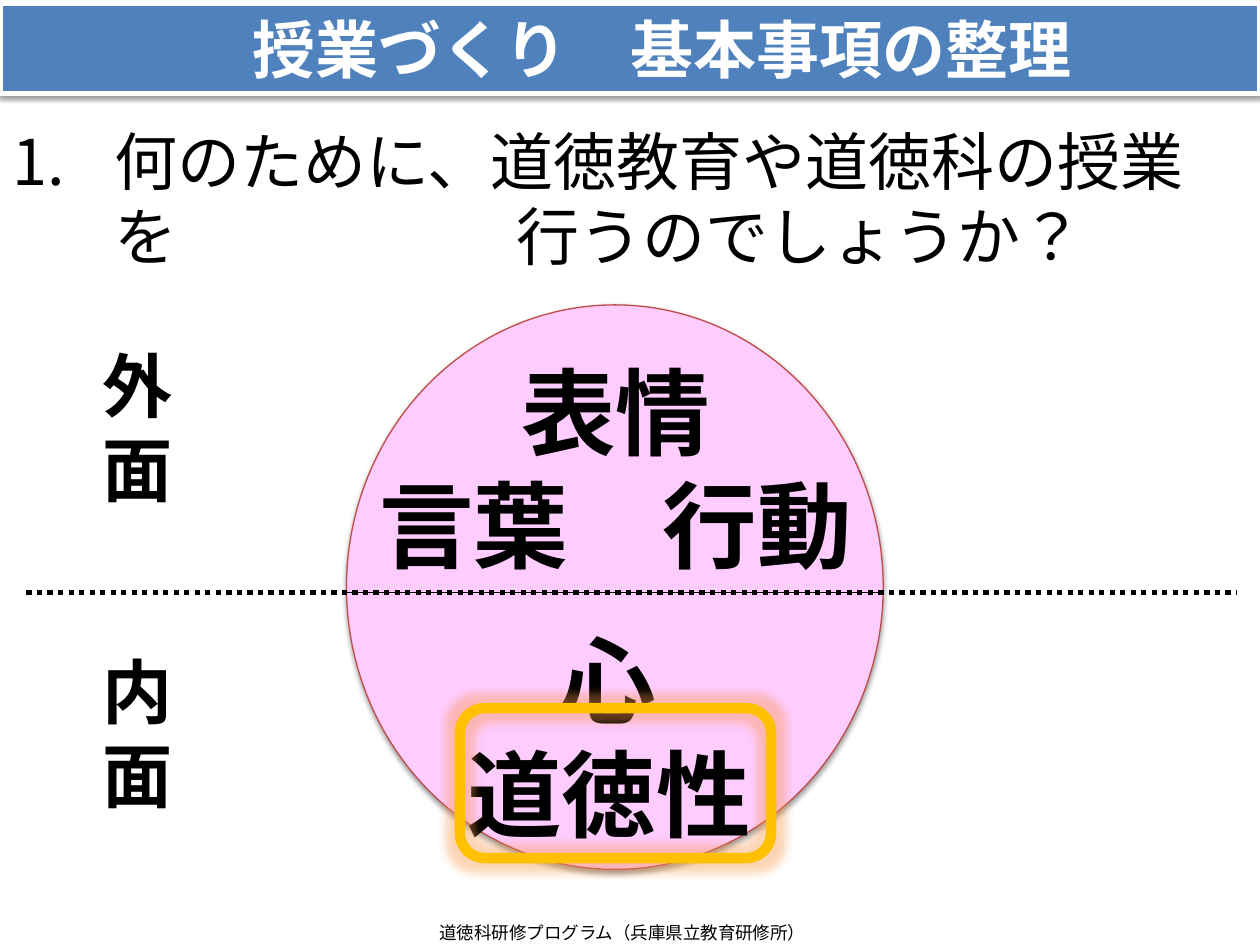
from lxml import etree
from pptx import Presentation
from pptx.dml.color import RGBColor
from pptx.enum.dml import MSO_LINE as Dash
from pptx.enum.lang import MSO_LANGUAGE_ID as Lang
from pptx.enum.shapes import MSO_CONNECTOR as Conn, MSO_SHAPE as Kind
from pptx.enum.text import MSO_ANCHOR as Anchor, PP_ALIGN as Align
from pptx.oxml.ns import qn
from pptx.util import Inches, Pt

FONT = "Noto Sans CJK JP"
BLACK, WHITE = "000000", "FFFFFF"
MID = 4.7  # height of the line between outside and inside
LEFT, RIGHT = 2.75, 7.01  # edges of the circle

TITLE = "　授業づくり　基本事項の整理"
ASK = "何のために、道徳教育や道徳科の授業\vを\t行うのでしょうか？"
FOOT = "道徳科研修プログラム（兵庫県立教育研修所）"
SIDES = [("外面", 2.67), ("内面", 5.1)]
WORDS = [
    (["心", "道徳性"], (3.6, 4.89, 2.47, 1.92)),
    (["表情", "言葉　行動"], (2.89, 2.76, 3.99, 1.92)),
]
RULES = [(LEFT, RIGHT, 0.75, None), (0.21, 9.82, 3, Dash.ROUND_DOT)]


def rgb(code):
    return RGBColor.from_string(code)


def node(parent, tag, **attrs):
    item = etree.SubElement(parent, qn(tag))
    for key, val in attrs.items():
        item.set(key, str(val))
    return item


def effect(shape, tag, code, alpha, **attrs):
    """Give the shape one effect: a shadow or a glow."""
    shape.shadow.inherit = False
    group = shape._element.spPr.find(qn("a:effectLst"))
    tint = node(node(group, tag, **attrs), "a:srgbClr", val=code)
    node(tint, "a:alpha", val=alpha * 1000)


def shade(shape):
    effect(shape, "a:outerShdw", BLACK, 38, blurRad=Pt(3.1), dist=Pt(1.6),
           dir=90 * 60000, algn="ctr", rotWithShape=0)


def style(shape, fill, line, width):
    if fill:
        shape.fill.solid()
        shape.fill.fore_color.rgb = rgb(fill)
    else:
        shape.fill.background()
    shape.line.color.rgb = rgb(line)
    shape.line.width = Pt(width)


def write(shape, lines, size, color=BLACK, bold=False, align=Align.CENTER,
          anchor=Anchor.TOP, wrap=True):
    frame = shape.text_frame
    frame.word_wrap = wrap
    frame.vertical_anchor = anchor
    frame.text = "\n".join(lines)
    for para in frame.paragraphs:
        para.alignment = align
        para.space_before = Pt(0)
        for run in para.runs:
            font = run.font
            font.size, font.bold, font.name = Pt(size), bold, FONT
            font.language_id = Lang.JAPANESE
            font.color.rgb = rgb(color)
            node(run._r.get_or_add_rPr(), "a:ea", typeface=FONT)
    return frame


def label(slide, box, lines, size, **form):
    return write(slide.shapes.add_textbox(*map(Inches, box)), lines, size, **form)


def rule(slide, start, end, width, dash):
    line = slide.shapes.add_connector(
        Conn.STRAIGHT, *map(Inches, (start, MID, end, MID)))
    line.line.color.rgb = rgb(BLACK)
    line.line.width = Pt(width)
    if dash:
        line.line.dash_style = dash
    node(line._element.spPr, "a:effectLst")


def number(para, indent, stop):
    """Number the paragraph, with a hanging indent and one tab stop."""
    props = para._p.get_or_add_pPr()
    props.set("marL", str(Inches(indent)))
    props.set("indent", str(-Inches(indent)))
    node(props, "a:buFont", typeface=FONT)
    node(props, "a:buAutoNum", type="arabicPeriod")
    node(node(props, "a:tabLst"), "a:tab", pos=Inches(stop), algn="l")


def main():
    deck = Presentation()
    deck.slide_width, deck.slide_height = Inches(10), Inches(7.5)
    slide = deck.slides.add_slide(deck.slide_layouts[5])
    shapes = slide.shapes

    title = shapes.title
    title.left, title.top, title.width, title.height = map(
        Inches, (0, 0.03, 10, 0.71))
    style(title, "4F81BD", WHITE, 3)
    shade(title)
    write(title, [TITLE], 36, color=WHITE, bold=True, anchor=Anchor.MIDDLE)

    ask = label(slide, (0, 0.92, 10.01, 1.31), [ASK], 36, align=Align.LEFT)
    number(ask.paragraphs[0], 0.81, 4)

    heart = shapes.add_shape(
        Kind.OVAL, *map(Inches, (LEFT, 2.42, RIGHT - LEFT, 4.48)))
    style(heart, "FFCCFF", "BF4C48", 0.75)
    shade(heart)

    for item in RULES:
        rule(slide, *item)
    for text, top in SIDES:
        label(slide, (0.56, top, 1.06, 1.45), [text], 40, bold=True)
    for lines, box in WORDS:
        label(slide, box, lines, 54, bold=True, wrap=False)

    frame = shapes.add_shape(
        Kind.ROUNDED_RECTANGLE, *map(Inches, (3.65, 5.62, 2.47, 1.19)))
    style(frame, None, "FFC000", 6)
    effect(frame, "a:glow", "F79646", 40, rad=Pt(11))

    label(slide, (3.39, 7.27, 3.24, 0.2), [FOOT], 10, align=Align.LEFT)
    deck.save("out.pptx")


if __name__ == "__main__":
    main()
